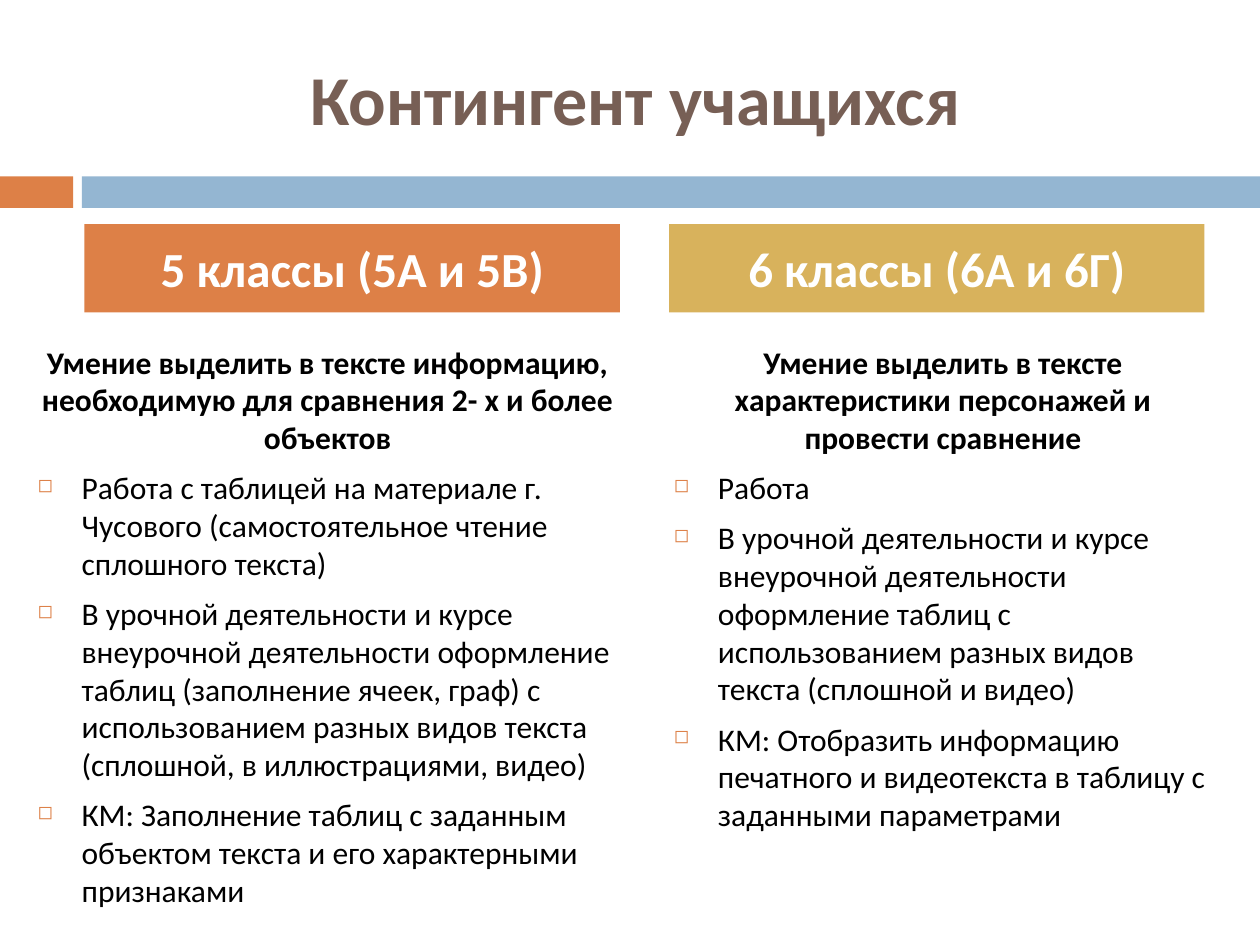
from lxml import etree
from pptx import Presentation
from pptx.dml.color import RGBColor
from pptx.enum import shapes, text
from pptx.oxml import ns
from pptx.util import Inches, Pt

ORANGE, BLUE, GOLD = "DD8047", "94B6D2", "D8B25C"
BROWN, BLACK, WHITE = "775F55", "000000", "FFFFFF"

TITLE = "Контингент учащихся"
TITLE_AREA = (0.58, 0.3, 8.92, 0.95)
BANDS = [((0, 1.4, 0.58, 0.25), ORANGE), ((0.65, 1.4, 9.35, 0.25), BLUE)]
GRADES = [
    {
        "heading": "5 классы (5А и 5В)",
        "color": ORANGE,
        "heading_left": 0.67,
        "area": (0.2, 2.67, 4.8, 4.71),
        "skill": "Умение выделить в тексте информацию, необходимую для сравнения 2- х и более объектов",
        "tasks": [
            "Работа с таблицей на материале г. Чусового (самостоятельное чтение сплошного текста)",
            "В урочной деятельности и курсе внеурочной деятельности оформление таблиц "
            "(заполнение ячеек, граф) с использованием разных видов текста "
            "(сплошной, в иллюстрациями, видео)",
            "КМ: Заполнение таблиц с заданным объектом текста и его характерными признаками",
        ],
    },
    {
        "heading": "6 классы (6А и 6Г)",
        "color": GOLD,
        "heading_left": 5.31,
        "area": (5.25, 2.67, 4.47, 4.63),
        "skill": "Умение выделить в тексте характеристики персонажей и провести сравнение",
        "tasks": [
            "Работа",
            "В урочной деятельности и курсе внеурочной деятельности оформление таблиц "
            "с использованием разных видов текста (сплошной и видео)",
            "КМ: Отобразить информацию печатного и видеотекста в таблицу с заданными параметрами",
        ],
    },
]
HEADING_TOP, HEADING_WIDTH, HEADING_HEIGHT = 1.78, 4.25, 0.7
TASK_INDENT = 0.35


def rgb(color):
    return RGBColor.from_string(color)


def add_bar(slide, area, color):
    bar = slide.shapes.add_shape(shapes.MSO_SHAPE.RECTANGLE, *map(Inches, area))
    bar.shadow.inherit = False
    bar.fill.solid()
    bar.fill.fore_color.rgb = rgb(color)
    bar.line.fill.background()
    return bar


def prepare_frame(holder, anchor):
    frame = holder.text_frame
    frame.word_wrap = True
    frame.vertical_anchor = anchor
    return frame


def write(paragraph, words, size, color, bold=True, align=text.PP_ALIGN.CENTER):
    paragraph.alignment = align
    paragraph.space_before = Pt(7)
    run = paragraph.add_run()
    run.text = words
    font_format = {"name": "Calibri", "size": Pt(size), "bold": bold}
    for attribute, value in font_format.items():
        setattr(run.font, attribute, value)
    run.font.color.rgb = rgb(color)


def add_bullet(paragraph):
    properties = paragraph._p.get_or_add_pPr()
    indent = Inches(TASK_INDENT)
    properties.set("marL", str(indent))
    properties.set("indent", str(-indent))
    bullet_color = etree.SubElement(properties, ns.qn("a:buClr"))
    etree.SubElement(bullet_color, ns.qn("a:srgbClr"), val=ORANGE)
    etree.SubElement(properties, ns.qn("a:buSzPct"), val="60000")
    etree.SubElement(properties, ns.qn("a:buChar"), char="◻")


def add_grade(slide, grade):
    body = slide.shapes.add_textbox(*map(Inches, grade["area"]))
    frame = prepare_frame(body, text.MSO_ANCHOR.TOP)
    write(frame.paragraphs[0], grade["skill"], 18, BLACK)
    for task in grade["tasks"]:
        paragraph = frame.add_paragraph()
        write(paragraph, task, 18, BLACK, bold=False, align=text.PP_ALIGN.LEFT)
        add_bullet(paragraph)

    heading_area = (grade["heading_left"], HEADING_TOP, HEADING_WIDTH, HEADING_HEIGHT)
    heading = add_bar(slide, heading_area, grade["color"])
    frame = prepare_frame(heading, text.MSO_ANCHOR.MIDDLE)
    write(frame.paragraphs[0], grade["heading"], 28, WHITE)


def main():
    deck = Presentation()
    deck.slide_width, deck.slide_height = Inches(10), Inches(7.5)
    slide = deck.slides.add_slide(deck.slide_layouts[6])
    for area, color in BANDS:
        add_bar(slide, area, color)
    title = slide.shapes.add_textbox(*map(Inches, TITLE_AREA))
    frame = prepare_frame(title, text.MSO_ANCHOR.MIDDLE)
    write(frame.paragraphs[0], TITLE, 40, BROWN)
    for grade in GRADES:
        add_grade(slide, grade)
    deck.save("out.pptx")


if __name__ == "__main__":
    main()
